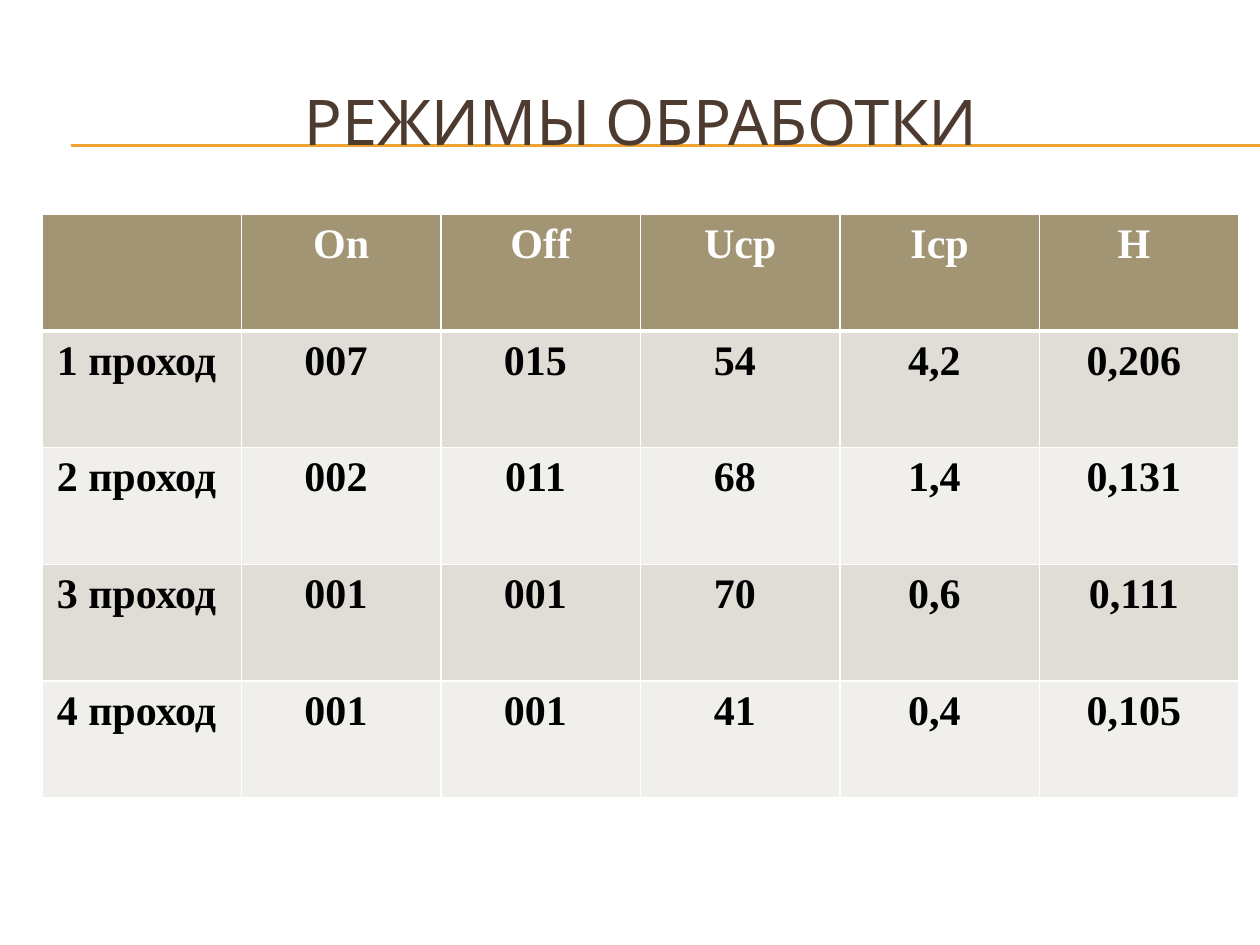
import lxml.etree
import pptx
import pptx.dml.color
import pptx.enum.shapes
import pptx.enum.text
import pptx.oxml.ns
import pptx.util

Pt = pptx.util.Pt
RGBColor = pptx.dml.color.RGBColor
qn = pptx.oxml.ns.qn

WHITE = RGBColor(0xFF, 0xFF, 0xFF)
BLACK = RGBColor(0x00, 0x00, 0x00)
BROWN = RGBColor(0x4E, 0x3B, 0x30)
ORANGE = RGBColor(0xF0, 0xA2, 0x2E)
HEADER_FILL = RGBColor(0xA1, 0x95, 0x74)
BAND_FILLS = [RGBColor(0xE0, 0xDD, 0xD6), RGBColor(0xF0, 0xEF, 0xEB)]

TABLE_ROWS = [
    ["", "On", "Off", "Uср", "Iср", "H "],
    ["1 проход ", "007 ", "015 ", "54 ", "4,2 ", "0,206 "],
    ["2 проход ", "002 ", "011 ", "68 ", "1,4 ", "0,131 "],
    ["3 проход ", "001 ", "001 ", "70 ", "0,6 ", "0,111 "],
    ["4 проход ", "001 ", "001 ", "41 ", "0,4 ", "0,105 "],
]
LEFT, WIDTH = 24, 684
COLUMN_WIDTH = WIDTH / len(TABLE_ROWS[0])
ROW_HEIGHT = 66.67


def add_run(paragraph, text, font_name, size, color, bold=False):
    run = paragraph.add_run()
    run.text = text
    run.font.name = font_name
    run.font.size = Pt(size)
    run.font.bold = bold
    run.font.color.rgb = color


def add_rule(slide, top):
    connector = slide.shapes.add_connector(
        pptx.enum.shapes.MSO_CONNECTOR.STRAIGHT, Pt(40.5), Pt(top), Pt(720), Pt(top)
    )
    connector.line.color.rgb = ORANGE
    connector.line.width = Pt(0.75)
    lxml.etree.SubElement(connector.element.spPr, qn("a:effectLst"))


def set_title(slide, text):
    title = slide.shapes.title
    title.element.getparent().append(title.element)
    title.left, title.top = Pt(LEFT), Pt(36)
    title.width, title.height = Pt(WIDTH), Pt(66)
    title.text_frame.vertical_anchor = pptx.enum.text.MSO_ANCHOR.MIDDLE
    paragraph = title.text_frame.paragraphs[0]
    paragraph.alignment = pptx.enum.text.PP_ALIGN.CENTER
    add_run(paragraph, text, "Karla", 36, BROWN)


def set_border(cell, side, width):
    properties = cell._tc.get_or_add_tcPr()
    line = lxml.etree.SubElement(properties, qn(f"a:{side}"), w=str(Pt(width)))
    fill = lxml.etree.SubElement(line, qn("a:solidFill"))
    lxml.etree.SubElement(fill, qn("a:srgbClr"), val=str(WHITE))


def format_cell(cell, text, fill_color, text_color, top_width, bottom_width):
    cell.margin_left = cell.margin_right = Pt(5)
    cell.margin_top = cell.margin_bottom = Pt(0)
    for side, width in (("lnL", 1), ("lnR", 1), ("lnT", top_width), ("lnB", bottom_width)):
        set_border(cell, side, width)
    cell.fill.solid()
    cell.fill.fore_color.rgb = fill_color
    paragraph = cell.text_frame.paragraphs[0]
    paragraph.alignment = pptx.enum.text.PP_ALIGN.CENTER
    paragraph.line_spacing = 1.15
    if text:
        add_run(paragraph, text, "Times New Roman", 24, text_color, bold=True)


def add_modes_table(slide):
    table = slide.shapes.add_table(
        len(TABLE_ROWS), len(TABLE_ROWS[0]), Pt(LEFT), Pt(122.5),
        Pt(WIDTH), Pt(ROW_HEIGHT * len(TABLE_ROWS)),
    ).table
    for column in table.columns:
        column.width = Pt(COLUMN_WIDTH)
    for row_index, values in enumerate(TABLE_ROWS):
        table.rows[row_index].height = Pt(ROW_HEIGHT)
        is_header = row_index == 0
        fill_color = HEADER_FILL if is_header else BAND_FILLS[(row_index - 1) % 2]
        text_color = WHITE if is_header else BLACK
        top_width = 3 if row_index == 1 else 1
        bottom_width = 3 if is_header else 1
        for column_index, value in enumerate(values):
            cell = table.cell(row_index, column_index)
            format_cell(cell, value, fill_color, text_color, top_width, bottom_width)


def main():
    presentation = pptx.Presentation()
    presentation.slide_width, presentation.slide_height = Pt(720), Pt(540)
    slide = presentation.slides.add_slide(presentation.slide_layouts[5])
    for top in (82.8, 83.5):
        add_rule(slide, top)
    set_title(slide, "РЕЖИМЫ ОБРАБОТКИ")
    add_modes_table(slide)
    presentation.save("out.pptx")


if __name__ == "__main__":
    main()
